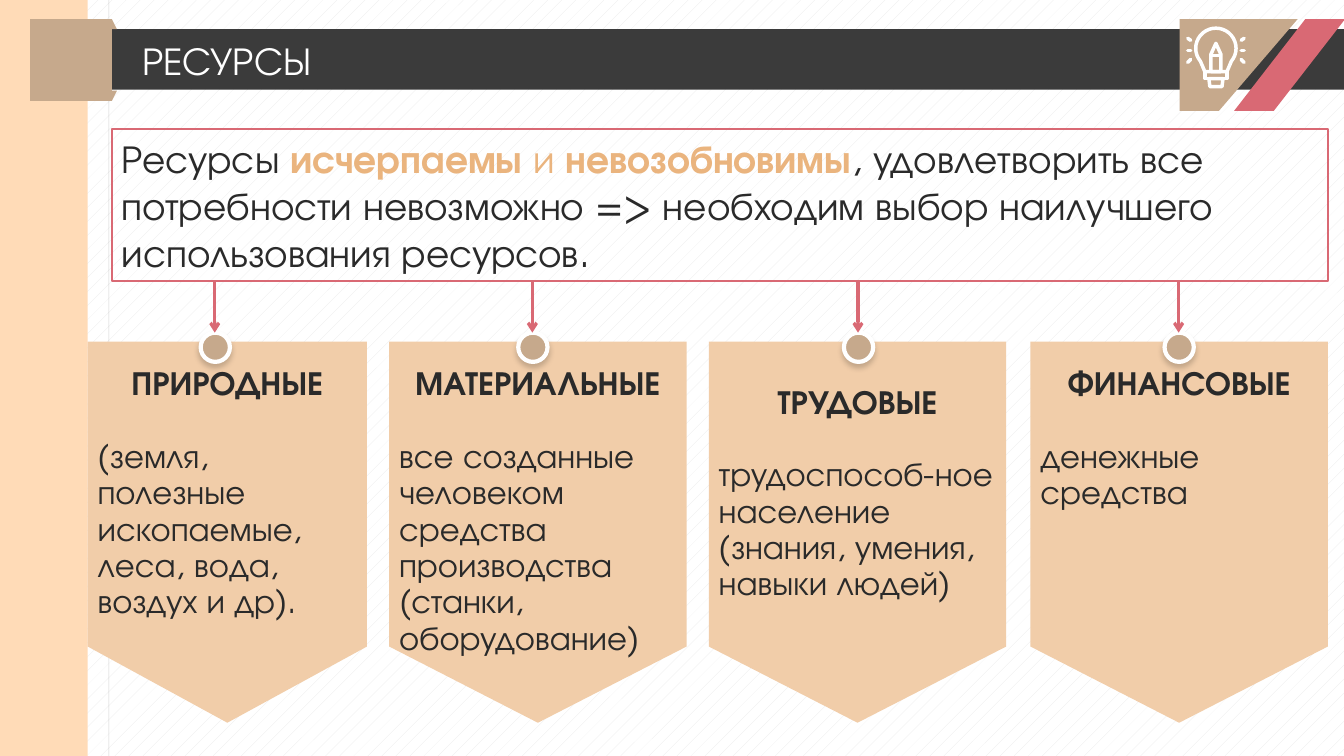
"""Build a slide on the four kinds of economic resources."""
from dataclasses import dataclass
from math import cos, radians, sin

from lxml.etree import SubElement
from pptx import Presentation
from pptx.dml.color import RGBColor
from pptx.enum.dml import MSO_PATTERN
from pptx.enum.shapes import MSO_CONNECTOR, MSO_SHAPE as Shape
from pptx.enum.text import MSO_ANCHOR as Anchor, PP_ALIGN as Align
from pptx.oxml.ns import qn
from pptx.util import Inches, Pt


@dataclass(frozen=True)
class Theme:
    font: str = "TeX Gyre Adventor"
    ink: RGBColor = RGBColor.from_string("2A2A2A")
    rule: RGBColor = RGBColor.from_string("1F1F1F")
    bar: RGBColor = RGBColor.from_string("3B3B3B")
    white: RGBColor = RGBColor.from_string("FFFFFF")
    dots: RGBColor = RGBColor.from_string("E9E9E9")
    peach: RGBColor = RGBColor.from_string("FFDBB7")
    card: RGBColor = RGBColor.from_string("F1CDA9")
    accent: RGBColor = RGBColor.from_string("EAB47E")
    tan: RGBColor = RGBColor.from_string("C6A98C")
    rose: RGBColor = RGBColor.from_string("D96974")
    large: int = Pt(28)
    medium: int = Pt(24)
    blank_line: int = Pt(26)


theme = Theme()
deck = Presentation()
deck.slide_width, deck.slide_height = Inches(13.33), Inches(7.5)
page = deck.slides.add_slide(deck.slide_layouts[6])
backdrop = page.background.fill
backdrop.patterned()
backdrop.pattern = MSO_PATTERN.PERCENT_5
backdrop.fore_color.rgb = theme.dots
backdrop.back_color.rgb = theme.white


def add_block(kind, left, top, width, height, fill=None):
    block = page.shapes.add_shape(
        kind, Inches(left), Inches(top), Inches(width), Inches(height))
    block.shadow.inherit = False
    block.line.fill.background()
    if fill is None:
        block.fill.background()
    else:
        block.fill.solid()
        block.fill.fore_color.rgb = fill
    return block


def add_line(start, end, color, weight):
    line = page.shapes.add_connector(
        MSO_CONNECTOR.STRAIGHT, *map(Inches, (*start, *end)))
    line.line.color.rgb = color
    line.line.width = Pt(weight)
    SubElement(line.element.spPr, qn("a:effectLst"))
    return line


margin_rule = add_line((1.08, 0), (1.08, 7.5), theme.rule, 0.5)
rule_color = next(margin_rule.element.iter(qn("a:srgbClr")))
SubElement(rule_color, qn("a:alpha"), val="20000")
add_block(Shape.RECTANGLE, 0, 0.29, 13.33, 0.6, theme.bar)
add_block(Shape.RECTANGLE, 0, 0, 0.87, 7.5, theme.peach)

title = page.shapes.add_textbox(
    Inches(1.41), Inches(0.36), Inches(10.54), Inches(0.47)).text_frame
title.word_wrap = True
title.vertical_anchor = Anchor.MIDDLE
title.margin_left = title.margin_right = title.margin_top = title.margin_bottom = 0
para = title.paragraphs[0]
para.text = "РЕСУРСЫ"
para.font.name, para.font.size = theme.font, theme.large
para.font.color.rgb = theme.white

intro = add_block(Shape.RECTANGLE, 1.11, 1.28, 12.06, 1.51)
intro.line.color.rgb = theme.rose
intro.line.width = Pt(1.5)
intro.text_frame.vertical_anchor = Anchor.TOP
para = intro.text_frame.paragraphs[0]
para.alignment = Align.LEFT
para.font.name, para.font.size = theme.font, theme.large
for text, color, bold in [
    ("Ресурсы ", theme.ink, False),
    ("исчерпаемы ", theme.accent, True),
    ("и ", theme.accent, False),
    ("невозобновимы", theme.accent, True),
    (", удовлетворить все потребности невозможно => необходим выбор "
     "наилучшего использования ресурсов.", theme.ink, False),
]:
    span = para.add_run()
    span.text = text
    span.font.color.rgb = color
    span.font.bold = bold

resources = [
    (0.87, 2.77, 2.13, 0.25, "ПРИРОДНЫЕ",
     "(земля, полезные ископаемые, леса, вода, воздух и др)."),
    (3.86, 2.95, 5.28, 0.25, "МАТЕРИАЛЬНЫЕ",
     "все созданные человеком средства производства (станки, оборудование)"),
    (7.03, 2.95, 8.51, 0.43, "ТРУДОВЫЕ",
     "трудоспособ-ное население (знания, умения, навыки людей)"),
    (10.22, 2.95, 11.69, 0.25, "ФИНАНСОВЫЕ", "денежные средства"),
]
for left, width, pin_x, inset, heading, detail in resources:
    card = add_block(
        Shape.FLOWCHART_OFFPAGE_CONNECTOR, left, 3.39, width, 3.78, theme.card)
    frame = card.text_frame
    frame.vertical_anchor = Anchor.TOP
    frame.margin_top, frame.margin_bottom = Inches(inset), 0
    for para, text, align, bold in [
        (frame.paragraphs[0], heading, Align.CENTER, True),
        (frame.add_paragraph(), detail, Align.LEFT, False),
    ]:
        para.text = text
        para.alignment = align
        para.line_spacing = 0.9
        para.font.name, para.font.size = theme.font, theme.medium
        para.font.bold = bold
        para.font.color.rgb = theme.ink
    para.space_before = theme.blank_line

    pin = add_block(Shape.OVAL, pin_x - 0.14, 3.3, 0.29, 0.29, theme.tan)
    pin.line.color.rgb = theme.white
    pin.line.width = Pt(3)
    effects = pin.element.spPr.find(qn("a:effectLst"))
    shade = SubElement(effects, qn("a:outerShdw"), blurRad=str(Pt(4)),
                       dist=str(Pt(3)), dir="5400000", rotWithShape="0")
    shade_color = SubElement(shade, qn("a:srgbClr"), val="000000")
    SubElement(shade_color, qn("a:alpha"), val="19000")
    arrow = add_line((pin_x, 2.8), (pin_x, 3.3), theme.rose, 2.25)
    SubElement(arrow.line._get_or_add_ln(), qn("a:tailEnd"), type="arrow")

add_block(Shape.RECTANGLE, 0.3, 0.19, 0.81, 0.81, theme.tan)
add_block(Shape.RIGHT_TRIANGLE, 1.11, 0.19, 0.05, 0.1, theme.tan)
lower_fold = add_block(Shape.RIGHT_TRIANGLE, 1.11, 0.9, 0.05, 0.1, theme.tan)
lower_fold.element.spPr.find(qn("a:xfrm")).set("flipV", "1")

bulb_x, bulb_y, bulb_radius = 12.06, 0.48, 0.2
badge = [(11.7, 0.19), (12.87, 0.19), (12.09, 1.1), (11.7, 1.1)]
glass = [(bulb_x + bulb_radius * cos(radians(angle)),
          bulb_y + bulb_radius * sin(radians(angle)))
         for angle in range(140, 401, 10)]
bulb = glass + [(12.17, 0.71), (11.95, 0.71)]
pencil = [(12.06, 0.43), (12.11, 0.54), (12.11, 0.71), (12.01, 0.71), (12.01, 0.54)]
collar = [(11.95, 0.71), (12.17, 0.71), (12.17, 0.78), (11.95, 0.78)]
tip = [(11.99, 0.78), (12.13, 0.78), (12.12, 0.86), (12, 0.86)]
for points, fill in [(badge, theme.tan), (bulb, None), (pencil, None),
                     (collar, None), (tip, None)]:
    corners = [(Inches(x), Inches(y)) for x, y in points]
    builder = page.shapes.build_freeform(*corners[0])
    builder.add_line_segments(corners[1:], close=True)
    outline = builder.convert_to_shape()
    outline.shadow.inherit = False
    if fill is None:
        outline.fill.background()
        outline.line.color.rgb = theme.white
        outline.line.width = Pt(2.5)
    else:
        outline.fill.solid()
        outline.fill.fore_color.rgb = fill
        outline.line.fill.background()

stripe = add_block(Shape.PARALLELOGRAM, 12.24, 0.19, 1.1, 0.91, theme.rose)
stripe.adjustments[0] = 0.776
add_line((12.01, 0.55), (12.11, 0.55), theme.white, 2.5)
for side in (-1, 1):
    for near_y, far_y in [(0.4, 0.38), (0.5, 0.5), (0.59, 0.62)]:
        ray = add_line((bulb_x + side * 0.25, near_y),
                       (bulb_x + side * 0.28, far_y), theme.white, 2.5)
        ray.line._get_or_add_ln().set("cap", "rnd")

deck.save("out.pptx")
